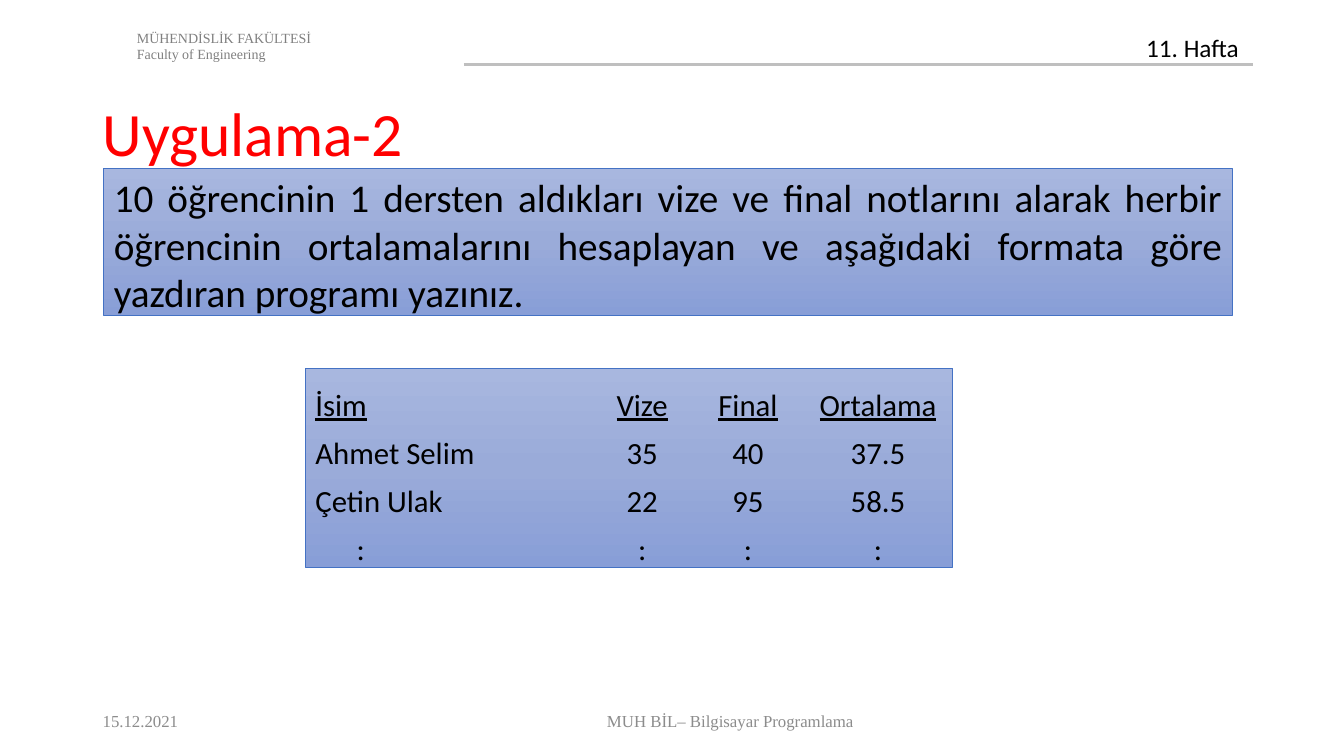
from copy import deepcopy

from lxml.etree import SubElement
from pptx import Presentation
from pptx.dml.color import RGBColor
from pptx.enum.shapes import MSO_CONNECTOR, MSO_SHAPE
from pptx.enum.text import MSO_ANCHOR, PP_ALIGN
from pptx.oxml.ns import qn
from pptx.util import Inches, Pt

COLORS = {
    "rule": "BFBFBF",
    "faculty": "808080",
    "footer": "8C8C8C",
    "title": "FF0000",
    "ink": "000000",
    "border": "4472C4",
    "panel_top": "A8B7DF",
    "panel_middle": "9AABD9",
    "panel_bottom": "889ED7",
}
SERIF = "Times New Roman"
GRADE_TABS = (0.45, 3.24, 4.29, 5.58)


def color(name):
    return RGBColor.from_string(COLORS[name])


def write(frame, lines, size, ink="ink", font="Calibri", align=PP_ALIGN.LEFT,
          spacing=1.0, anchor=MSO_ANCHOR.TOP, tabs=(), underlined_line=None):
    frame.word_wrap = True
    frame.vertical_anchor = anchor
    for index, line in enumerate(lines):
        paragraph = frame.paragraphs[0] if index == 0 else frame.add_paragraph()
        paragraph.alignment = align
        paragraph.line_spacing = spacing
        if tabs:
            stops = SubElement(paragraph._p.get_or_add_pPr(), qn("a:tabLst"))
            for position in tabs:
                SubElement(stops, qn("a:tab"), pos=str(Inches(position)), algn="ctr")
        underlined = index == underlined_line
        pieces = line.replace("\t", "|\t|").split("|") if underlined else [line]
        for piece in filter(None, pieces):
            run = paragraph.add_run()
            run.text = piece
            run.font.size = Pt(size)
            run.font.name = font
            run.font.color.rgb = color(ink)
            run.font.underline = underlined and piece != "\t"


class SlideBuilder:
    def __init__(self, slide):
        self.shapes = slide.shapes

    def rule(self, left, right, y):
        line = self.shapes.add_connector(
            MSO_CONNECTOR.STRAIGHT, Inches(left), Inches(y), Inches(right), Inches(y))
        line.line.color.rgb = color("rule")
        line.line.width = Pt(1.5)
        SubElement(line._element.spPr, qn("a:effectLst"))

    def text(self, box, lines, size, **style):
        frame = self.shapes.add_textbox(*map(Inches, box)).text_frame
        write(frame, lines, size, **style)

    def panel(self, box, lines, size, **style):
        panel = self.shapes.add_shape(MSO_SHAPE.RECTANGLE, *map(Inches, box))
        panel.shadow.inherit = False
        panel.line.color.rgb = color("border")
        panel.line.width = Pt(0.5)
        panel.fill.gradient()
        panel.fill.gradient_angle = 270
        stops = panel._element.spPr.find(".//" + qn("a:gsLst"))
        stops.insert(1, deepcopy(stops[0]))
        shades = ("panel_top", "panel_middle", "panel_bottom")
        for index, (stop, shade) in enumerate(zip(panel.fill.gradient_stops, shades)):
            stop.position = index / 2
            stop.color.rgb = color(shade)
        panel.text_frame.margin_bottom = 0
        write(panel.text_frame, lines, size, anchor=MSO_ANCHOR.MIDDLE, **style)


def main():
    deck = Presentation()
    deck.slide_width, deck.slide_height = Inches(13.33), Inches(7.5)
    slide = SlideBuilder(deck.slides.add_slide(deck.slide_layouts[6]))

    slide.rule(4.6, 12.43, 0.64)
    slide.text((1.26, 0.24, 6.67, 0.44),
               ["MÜHENDİSLİK FAKÜLTESİ", "Faculty of Engineering"],
               10, ink="faculty", font=SERIF)
    slide.text((11.27, 0.27, 1.15, 0.4), ["11. Hafta"], 18)

    slide.panel((1.03, 1.67, 11.19, 1.46),
                ["10 öğrencinin 1 dersten aldıkları vize ve final notlarını alarak "
                 "herbir öğrencinin ortalamalarını hesaplayan ve aşağıdaki formata "
                 "göre yazdıran programı yazınız."],
                28, align=PP_ALIGN.JUSTIFY)
    slide.panel((3.03, 3.65, 6.42, 1.98),
                ["İsim\tVize\tFinal\tOrtalama",
                 "Ahmet Selim\t35\t40\t37.5",
                 "Çetin Ulak\t22\t95\t58.5",
                 "\t:\t:\t:\t:"],
                22, spacing=1.3, tabs=GRADE_TABS, underlined_line=0)

    footer = dict(ink="footer", font=SERIF, anchor=MSO_ANCHOR.MIDDLE)
    slide.text((0.92, 6.95, 1.57, 0.4), ["15.12.2021"], 12, **footer)
    slide.text((2.73, 6.95, 9.03, 0.4), ["MUH BİL– Bilgisayar Programlama"], 12,
               align=PP_ALIGN.CENTER, **footer)
    slide.text((0.92, 0.98, 11.5, 0.87), ["Uygulama-2"], 44, ink="title", spacing=0.9)

    deck.save("out.pptx")


if __name__ == "__main__":
    main()
